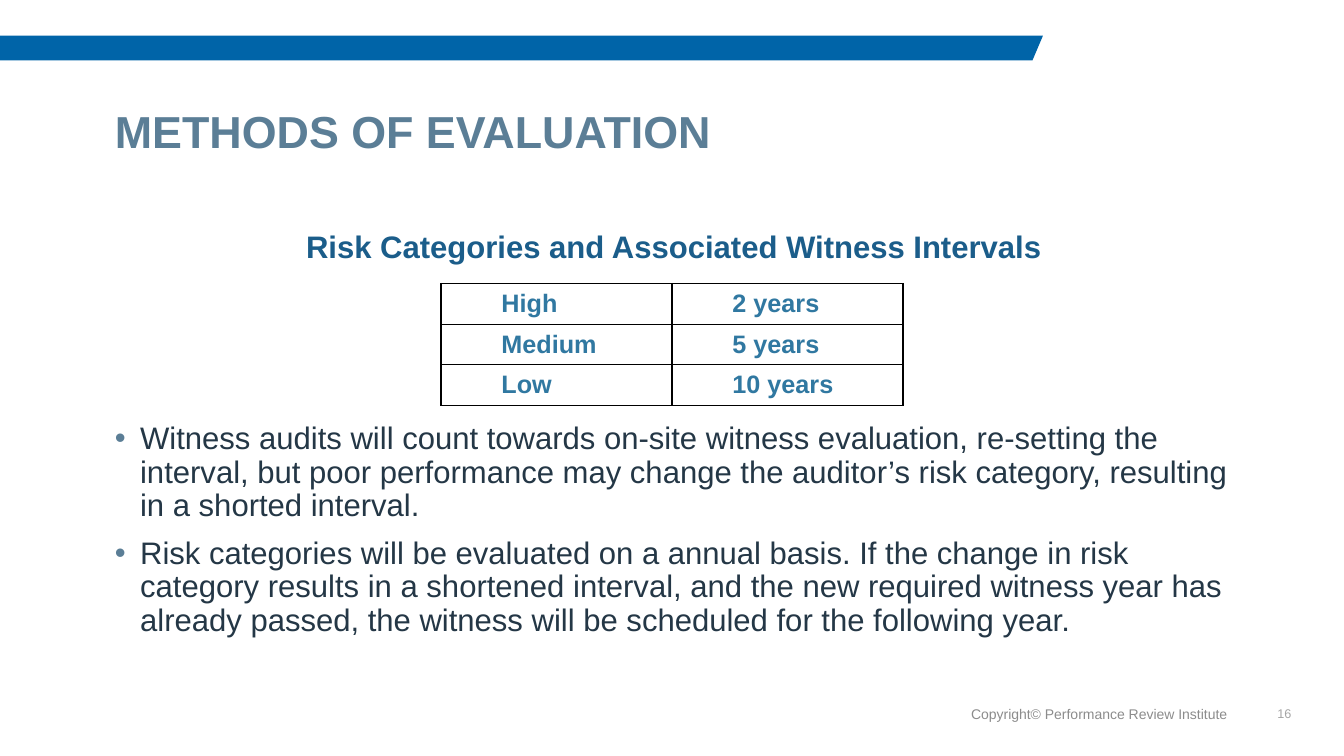
from dataclasses import dataclass

from lxml.etree import SubElement
from pptx import Presentation
from pptx.dml.color import RGBColor as RGB
from pptx.enum.text import MSO_ANCHOR as Anchor, PP_ALIGN as Align
from pptx.oxml import parse_xml
from pptx.oxml.ns import nsdecls, qn
from pptx.util import Pt

COLORS = {
    "bar": "0064A8", "title": "5B7E96", "heading": "1B5D8A", "body": "243746",
    "table": "3078A1", "footer": "8C8C8C", "number": "A5A5A5", "border": "000000",
}
FORMATS = {
    "title": {"size": Pt(32), "bold": True},
    "heading": {"size": Pt(22.2), "bold": True},
    "body": {"size": Pt(22.2), "bold": False},
    "table": {"size": Pt(18), "bold": True},
    "footer": {"size": Pt(10), "bold": False},
    "number": {"size": Pt(9), "bold": False},
}


@dataclass
class TextBox:
    """A text block with its place, style and paragraphs."""
    style: str
    left: float
    top: float
    width: float
    height: float
    paragraphs: list[str]
    align: Align = Align.LEFT
    anchor: Anchor = Anchor.TOP
    line_spacing: float = 1.0
    bulleted: bool = False


BOXES = [
    TextBox("heading", 75, 162, 813, 36,
            ["Risk Categories and Associated Witness Intervals"],
            align=Align.CENTER, line_spacing=0.9),
    TextBox("body", 75, 298.5, 813, 166, [
        "Witness audits will count towards on-site witness evaluation, re-setting the "
        "interval, but poor performance may change the auditor’s risk category, "
        "resulting in a shorted interval.",
        "Risk categories will be evaluated on a annual basis. If the change in risk "
        "category results in a shortened interval, and the new required witness year "
        "has already passed, the witness will be scheduled for the following year.",
    ], line_spacing=0.9, bulleted=True),
    TextBox("title", 75, 75, 813, 39.5, ["METHODS OF EVALUATION"], line_spacing=0.9),
    TextBox("footer", 684, 502.5, 199.5, 14.5,
            ["Copyright© Performance Review Institute"], Align.RIGHT, Anchor.MIDDLE),
    TextBox("number", 889, 502.5, 40.5, 14.5, ["16"], Align.RIGHT, Anchor.MIDDLE),
]
INTERVALS = [("High", "2 years"), ("Medium", "5 years"), ("Low", "10 years")]


def add_run(p, text: str, style: str) -> None:
    """Add a run in the named style."""
    r = p.add_run()
    r.text = text
    for name, value in FORMATS[style].items():
        setattr(r.font, name, value)
    r.font.name = "Arial"
    r.font.color.rgb = RGB.from_string(COLORS[style])


def add_bullet(p) -> None:
    """Give a paragraph a hanging coloured bullet."""
    pPr = p._p.get_or_add_pPr()
    pPr.set("marL", str(Pt(18)))
    pPr.set("indent", str(-Pt(18)))
    color = SubElement(pPr, qn("a:buClr"))
    SubElement(color, qn("a:srgbClr"), val=COLORS["title"])
    SubElement(pPr, qn("a:buFont"), typeface="Arial")
    SubElement(pPr, qn("a:buChar"), char="•")


def add_text(slide, box: TextBox) -> None:
    """Draw a text box."""
    sp = slide.shapes.add_textbox(Pt(box.left), Pt(box.top), Pt(box.width), Pt(box.height))
    tf = sp.text_frame
    tf.word_wrap = True
    tf.vertical_anchor = box.anchor
    for i, text in enumerate(box.paragraphs):
        p = tf.add_paragraph() if i else tf.paragraphs[0]
        p.alignment = box.align
        p.line_spacing = box.line_spacing
        if i:
            p.space_before = Pt(10)
        if box.bulleted:
            add_bullet(p)
        add_run(p, text, box.style)


def add_bar(slide) -> None:
    """Draw the slanted header bar."""
    builder = slide.shapes.build_freeform(0, Pt(25.5))
    builder.add_line_segments([(Pt(745), Pt(25.5)), (Pt(737.5), Pt(43.2)), (0, Pt(43.2))])
    sp = builder.convert_to_shape()
    sp.shadow.inherit = False
    sp.fill.solid()
    sp.fill.fore_color.rgb = RGB.from_string(COLORS["bar"])
    sp.line.fill.background()


def add_borders(cell) -> None:
    """Outline a table cell on all sides."""
    tcPr = cell._tc.get_or_add_tcPr()
    for i, side in enumerate("LRTB"):
        tcPr.insert(i, parse_xml(
            f'<a:ln{side} {nsdecls("a")} w="{Pt(1)}"><a:solidFill>'
            f'<a:srgbClr val="{COLORS["border"]}"/></a:solidFill></a:ln{side}>'))


def add_intervals(slide) -> None:
    """Draw the table of witness intervals."""
    table = slide.shapes.add_table(
        len(INTERVALS), 2, Pt(315), Pt(202.5), Pt(330), Pt(87)).table
    table.first_row = table.horz_banding = False
    for row, values in zip(table.rows, INTERVALS):
        for cell, text in zip(row.cells, values):
            cell.fill.background()
            cell.vertical_anchor = Anchor.MIDDLE
            add_borders(cell)
            p = cell.text_frame.paragraphs[0]
            p.level = 1
            p._p.get_or_add_pPr().set("marL", str(Pt(36)))
            add_run(p, text, "table")


def main() -> None:
    """Build and save the slide."""
    prs = Presentation()
    prs.slide_width, prs.slide_height = Pt(960), Pt(540)
    s = prs.slides.add_slide(prs.slide_layouts[6])
    add_bar(s)
    for box in BOXES:
        add_text(s, box)
    add_intervals(s)
    prs.save("out.pptx")


if __name__ == "__main__":
    main()
